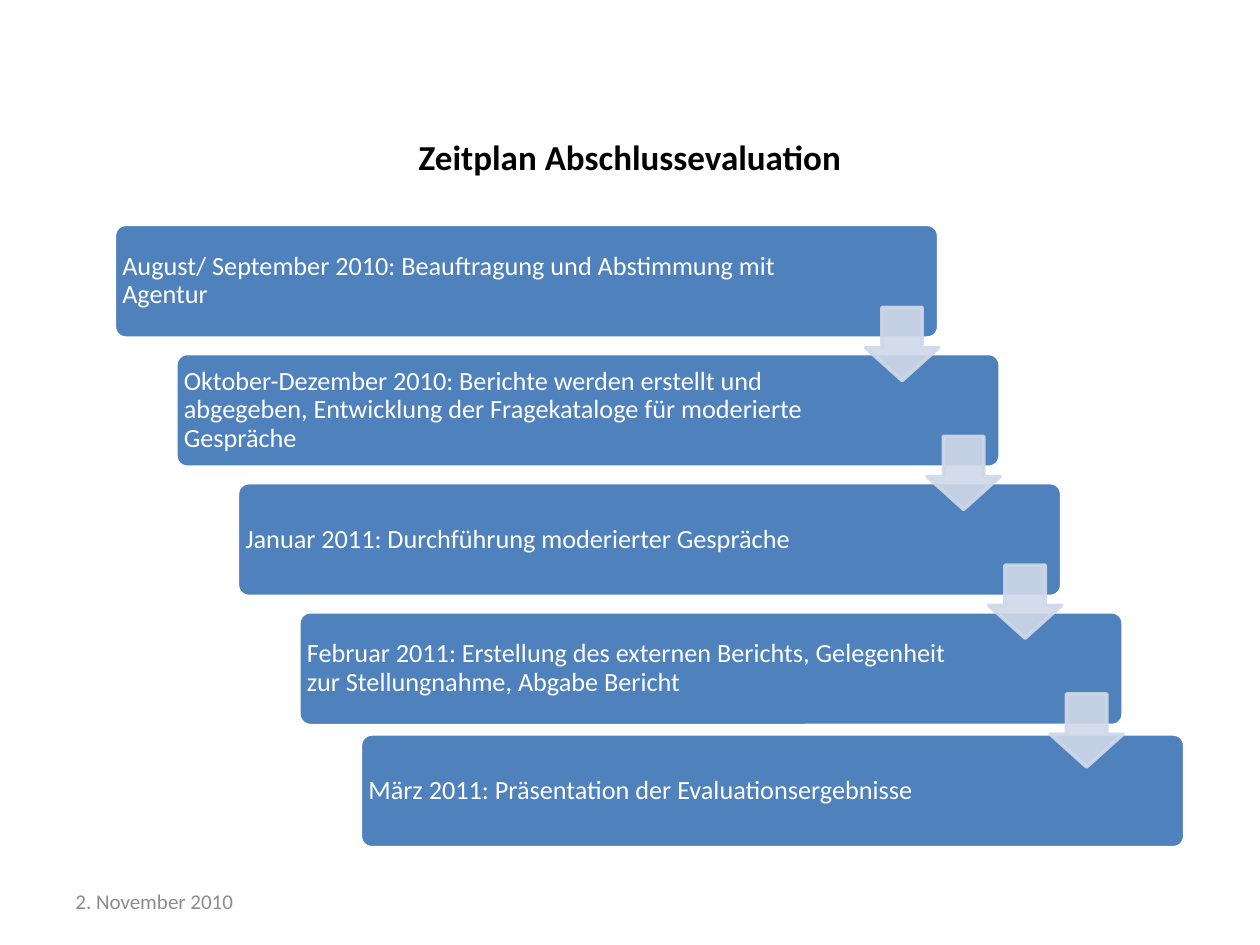
from dataclasses import dataclass

from lxml import etree
from pptx import Presentation
from pptx import util as u
from pptx.dml.color import RGBColor
from pptx.enum import shapes, text
from pptx.oxml.ns import qn


@dataclass(frozen=True)
class Theme:
    font: str = "Calibri"
    ink: str = "000000"
    paper: str = "FFFFFF"
    step: str = "4F81BD"
    arrow: str = "D0D8E8"
    muted: str = "8C8C8C"
    title_size: int = 20
    step_size: int = 15
    date_size: int = 12
    line_width: int = 2


STEPS = [
    "August/ September 2010: Beauftragung und Abstimmung mit Agentur",
    "Oktober-Dezember 2010: Berichte werden erstellt und abgegeben, "
    "Entwicklung der Fragekataloge für moderierte Gespräche",
    "Januar 2011: Durchführung moderierter Gespräche",
    "Februar 2011: Erstellung des externen Berichts, "
    "Gelegenheit zur Stellungnahme, Abgabe Bericht",
    "März 2011: Präsentation der Evaluationsergebnisse",
]
STEP_LEFT, STEP_TOP = 65.4, 128.2
STEP_WIDTH, STEP_HEIGHT = 471, 65
STEP_DX, STEP_DY = 35.15, 73.8
LAST_STEP_LIFT = 4
LABEL_WIDTH = 394
ARROW_SIZE = 41.8
ARROW_TOP, ARROW_DY = 175.7, 73.6


class Deck:
    def __init__(self, prs, theme):
        self.theme = theme
        self.slide = prs.slides.add_slide(prs.slide_layouts[6])

    def label(self, words, box, size, color, bold=False, align=text.PP_ALIGN.LEFT,
              inset=(7.2, 3.6), spacing=1.0):
        sp = self.slide.shapes.add_textbox(*map(u.Pt, box))
        tf = sp.text_frame
        tf.word_wrap = True
        tf.vertical_anchor = text.MSO_ANCHOR.MIDDLE
        tf.margin_left = tf.margin_right = u.Pt(inset[0])
        tf.margin_top = tf.margin_bottom = u.Pt(inset[1])
        p = tf.paragraphs[0]
        p.alignment = align
        p.line_spacing = spacing
        r = p.add_run()
        r.text = words
        r.font.name = self.theme.font
        r.font.size = u.Pt(size)
        r.font.bold = bold
        r.font.color.rgb = RGBColor.from_string(color)

    def shape(self, kind, box, fill, line, adjustments, opacity=100):
        sp = self.slide.shapes.add_shape(kind, *map(u.Pt, box))
        sp.shadow.inherit = False
        for i, value in enumerate(adjustments):
            sp.adjustments[i] = value
        sp.fill.solid()
        sp.fill.fore_color.rgb = RGBColor.from_string(fill)
        sp.line.color.rgb = RGBColor.from_string(line)
        sp.line.width = u.Pt(self.theme.line_width)
        if opacity < 100:
            for color in sp.element.spPr.iter(qn("a:srgbClr")):
                etree.SubElement(color, qn("a:alpha"), val=str(opacity * 1000))

    def step(self, words, left, top):
        th = self.theme
        self.shape(shapes.MSO_SHAPE.ROUNDED_RECTANGLE,
                   (left, top, STEP_WIDTH, STEP_HEIGHT), th.step, th.paper, [0.1])
        self.label(words, (left, top, LABEL_WIDTH, STEP_HEIGHT), th.step_size,
                   th.paper, inset=(4.5, 4.5), spacing=0.9)

    def arrow(self, left, top):
        th = self.theme
        self.shape(shapes.MSO_SHAPE.DOWN_ARROW, (left, top, ARROW_SIZE, ARROW_SIZE),
                   th.arrow, th.arrow, [0.55, 0.45], opacity=90)


def main():
    prs = Presentation()
    prs.slide_width, prs.slide_height = u.Pt(720), u.Pt(540)
    th = Theme()
    deck = Deck(prs, th)

    deck.label("Zeitplan Abschlussevaluation", (54, 71.5, 612, 36), th.title_size,
               th.ink, bold=True, align=text.PP_ALIGN.CENTER)

    last = len(STEPS) - 1
    for i, words in enumerate(STEPS):
        lift = LAST_STEP_LIFT if i == last else 0
        deck.step(words, STEP_LEFT + i * STEP_DX, STEP_TOP + i * STEP_DY - lift)
    for i in range(last):
        right = STEP_LEFT + STEP_WIDTH + i * STEP_DX
        deck.arrow(right - ARROW_SIZE, ARROW_TOP + i * ARROW_DY)

    deck.label("2. November 2010", (36, 500.5, 168, 28.8), th.date_size, th.muted)
    prs.save("out.pptx")


if __name__ == "__main__":
    main()
